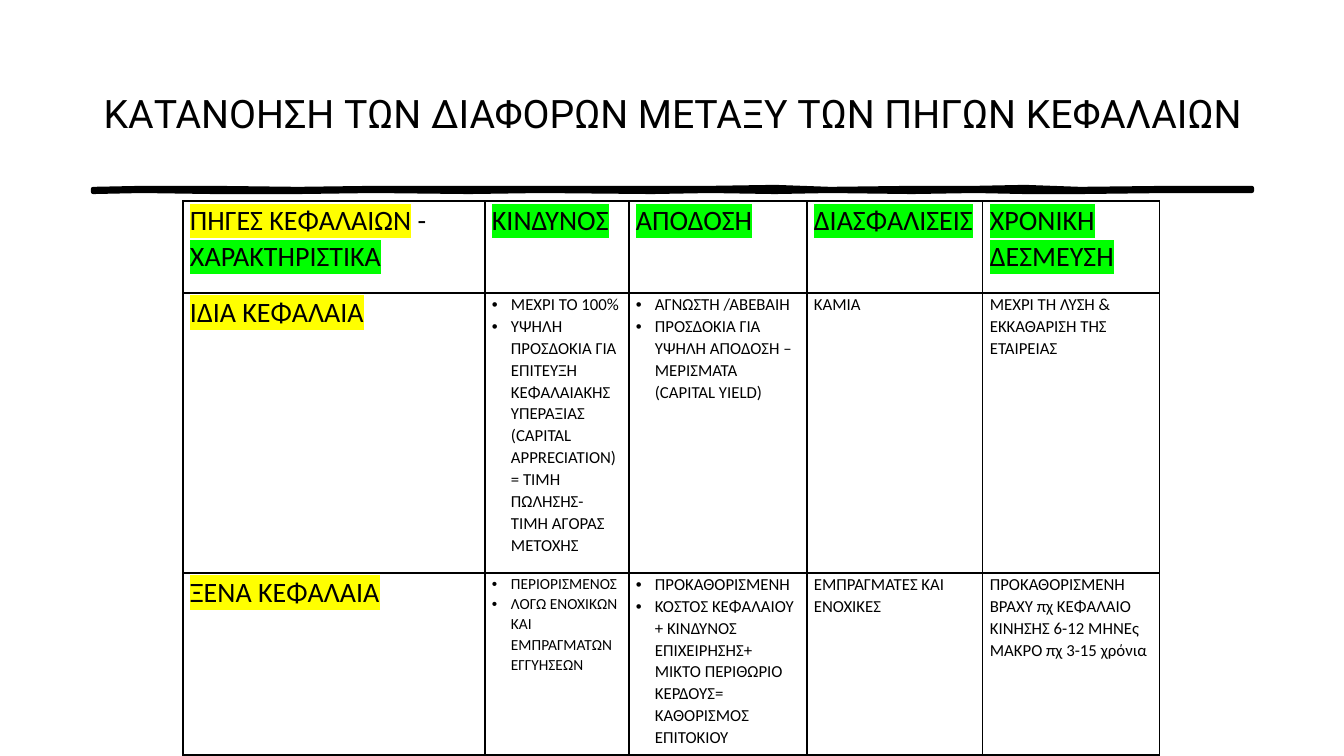
import pptx
import pptx.util
import pptx.dml.color
import pptx.enum.text
import pptx.oxml
import pptx.oxml.ns
from dataclasses import dataclass


@dataclass(frozen=True)
class Theme:
    ink: str = "000000"
    source_mark: str = "FFFF00"
    trait_mark: str = "00FF00"
    title_font: str = "Roboto"
    table_font: str = "Calibri"
    title_size: int = 28
    heading_size: int = 20
    body_size: int = 12
    small_size: int = 11
    border_width: int = 1
    stroke_width: int = 3
    line_spacing: float = 1.07


THEME = Theme()

# Content
TITLE = "ΚΑΤΑΝΟΗΣΗ ΤΩΝ ΔΙΑΦΟΡΩΝ ΜΕΤΑΞΥ ΤΩΝ ΠΗΓΩΝ ΚΕΦΑΛΑΙΩΝ"
CORNER = [("ΠΗΓΕΣ ΚΕΦΑΛΑΙΩΝ", THEME.source_mark), (" - ", None),
          ("ΧΑΡΑΚΤΗΡΙΣΤΙΚΑ", THEME.trait_mark)]
TRAITS = ["ΚΙΝΔΥΝΟΣ", "ΑΠΟΔΟΣΗ", "ΔΙΑΣΦΑΛΙΣΕΙΣ", "ΧΡΟΝΙΚΗ ΔΕΣΜΕΥΣΗ"]
SOURCES = [
    ("ΙΔΙΑ ΚΕΦΑΛΑΙΑ", [
        ["ΜΕΧΡΙ ΤΟ 100%",
         "ΥΨΗΛΗ ΠΡΟΣΔΟΚΙΑ ΓΙΑ ΕΠΙΤΕΥΞΗ ΚΕΦΑΛΑΙΑΚΗΣ ΥΠΕΡΑΞΙΑΣ "
         "(CAPITAL APPRECIATION)= ΤΙΜΗ ΠΩΛΗΣΗΣ- ΤΙΜΗ ΑΓΟΡΑΣ ΜΕΤΟΧΗΣ"],
        ["ΑΓΝΩΣΤΗ /ΑΒΕΒΑΙΗ",
         "ΠΡΟΣΔΟΚΙΑ ΓΙΑ ΥΨΗΛΗ ΑΠΟΔΟΣΗ – ΜΕΡΙΣΜΑΤΑ (CAPITAL YIELD)"],
        ["ΚΑΜΙΑ"],
        ["ΜΕΧΡΙ ΤΗ ΛΥΣΗ & ΕΚΚΑΘΑΡΙΣΗ ΤΗΣ ΕΤΑΙΡΕΙΑΣ"],
    ]),
    ("ΞΕΝΑ ΚΕΦΑΛΑΙΑ", [
        ["ΠΕΡΙΟΡΙΣΜΕΝΟΣ", "ΛΟΓΩ ΕΝΟΧΙΚΩΝ ΚΑΙ ΕΜΠΡΑΓΜΑΤΩΝ ΕΓΓΥΗΣΕΩΝ"],
        ["ΠΡΟΚΑΘΟΡΙΣΜΕΝΗ",
         "ΚΟΣΤΟΣ ΚΕΦΑΛΑΙΟΥ + ΚΙΝΔΥΝΟΣ ΕΠΙΧΕΙΡΗΣΗΣ+ ΜΙΚΤΟ ΠΕΡΙΘΩΡΙΟ "
         "ΚΕΡΔΟΥΣ= ΚΑΘΟΡΙΣΜΟΣ ΕΠΙΤΟΚΙΟΥ"],
        ["ΕΜΠΡΑΓΜΑΤΕΣ ΚΑΙ ΕΝΟΧΙΚΕΣ"],
        ["ΠΡΟΚΑΘΟΡΙΣΜΕΝΗ", "ΒΡΑΧΥ πχ ΚΕΦΑΛΑΙΟ ΚΙΝΗΣΗΣ 6-12 ΜΉΝΕς",
         "ΜΑΚΡΟ πχ 3-15 χρόνια"],
    ]),
]
BULLETED = (1, 2)
SMALL_CELL = (2, 1)

# Geometry in px
PX = 12192000 / 1344
SLIDE = (1344, 756)
TITLE_BOX = (93, 40, 1159, 146)
TABLE_AT = (183, 201)
COLUMNS = [302, 144, 178, 176, 177]
ROWS = [92, 280, 182]
CELL_MARGIN = 7
BULLET_INDENT = 19
# Brush stroke: x, top edge, bottom edge
BRUSH = [(93, 189, 192), (142, 188, 191), (214, 188, 192), (298, 189, 192),
         (374, 188, 191), (469, 188, 192), (541, 188, 191), (652, 188, 192),
         (710, 188, 191), (775, 187, 192), (830, 189, 191), (912, 188, 192),
         (975, 188, 191), (1025, 187, 192), (1080, 189, 192),
         (1168, 188, 191), (1252, 188, 191)]


def emu(px):
    return pptx.util.Emu(round(px * PX))


def colour(code):
    return pptx.dml.color.RGBColor.from_string(code)


def xml(text):
    return pptx.oxml.parse_xml(
        text.replace("/>", f" {pptx.oxml.ns.nsdecls('a')}/>", 1)
        if text.endswith("/>") and text.count("<") == 1
        else text.replace(">", f" {pptx.oxml.ns.nsdecls('a')}>", 1))


def format_span(span, font, size, mark=None):
    span.font.size = pptx.util.Pt(size)
    span.font.name = font
    span.font.color.rgb = colour(THEME.ink)
    if mark:
        fill = span.font._element.find(pptx.oxml.ns.qn("a:solidFill"))
        fill.addnext(xml(f'<a:highlight><a:srgbClr val="{mark}"/></a:highlight>'))


def add_bullet(para):
    properties = para._p.get_or_add_pPr()
    properties.set("marL", str(emu(BULLET_INDENT)))
    properties.set("indent", str(-emu(BULLET_INDENT)))
    properties.append(xml('<a:buFont typeface="Arial"/>'))
    properties.append(xml('<a:buChar char="•"/>'))


def format_cell(cell):
    cell.margin_left = cell.margin_right = emu(CELL_MARGIN)
    cell.margin_top = cell.margin_bottom = 0
    cell.fill.background()
    width = pptx.util.Pt(THEME.border_width)
    for index, side in enumerate(("lnL", "lnR", "lnT", "lnB")):
        cell._tc.get_or_add_tcPr().insert(index, xml(
            f'<a:{side} w="{width}"><a:solidFill><a:srgbClr val="{THEME.ink}"/>'
            f'</a:solidFill></a:{side}>'))


def write_cell(cell, paragraphs, size, bulleted=False):
    format_cell(cell)
    for index, spans in enumerate(paragraphs):
        frame = cell.text_frame
        para = frame.add_paragraph() if index else frame.paragraphs[0]
        para.line_spacing = THEME.line_spacing
        if bulleted:
            add_bullet(para)
        for text, mark in spans:
            span = para.add_run()
            span.text = text
            format_span(span, THEME.table_font, size, mark)


def add_brush(page):
    outline = [(x, top) for x, top, _ in BRUSH]
    outline += [(x, bottom) for x, _, bottom in reversed(BRUSH)]
    builder = page.shapes.build_freeform(*outline[0], scale=PX)
    builder.add_line_segments(outline[1:], close=True)
    brush = builder.convert_to_shape()
    brush.shadow.inherit = False
    brush.fill.solid()
    brush.fill.fore_color.rgb = colour(THEME.ink)
    brush.line.color.rgb = colour(THEME.ink)
    brush.line.width = pptx.util.Pt(THEME.stroke_width)


def add_title(page):
    box = page.shapes.title
    box.left, box.top, box.width, box.height = map(emu, TITLE_BOX)
    frame = box.text_frame
    frame.text = TITLE
    frame.word_wrap = True
    frame.margin_left = frame.margin_right = 0
    frame.vertical_anchor = pptx.enum.text.MSO_ANCHOR.MIDDLE
    para = frame.paragraphs[0]
    para.alignment = pptx.enum.text.PP_ALIGN.CENTER
    format_span(para.runs[0], THEME.title_font, THEME.title_size)


def add_sources_table(page):
    table = page.shapes.add_table(
        len(ROWS), len(COLUMNS), *map(emu, TABLE_AT),
        emu(sum(COLUMNS)), emu(sum(ROWS))).table
    table.first_row = table.horz_banding = False
    for column, width in zip(table.columns, COLUMNS):
        column.width = emu(width)
    for row, height in zip(table.rows, ROWS):
        row.height = emu(height)

    # Headings across the top
    headings = [CORNER] + [[(name, THEME.trait_mark)] for name in TRAITS]
    for c, spans in enumerate(headings):
        write_cell(table.cell(0, c), [spans], THEME.heading_size)

    # One row for each source of capital
    for r, (source, details) in enumerate(SOURCES, 1):
        write_cell(table.cell(r, 0), [[(source, THEME.source_mark)]],
                   THEME.heading_size)
        for c, lines in enumerate(details, 1):
            size = THEME.small_size if (r, c) == SMALL_CELL else THEME.body_size
            write_cell(table.cell(r, c), [[(line, None)] for line in lines],
                       size, c in BULLETED)


def main():
    deck = pptx.Presentation()
    deck.slide_width, deck.slide_height = map(emu, SLIDE)
    page = deck.slides.add_slide(deck.slide_layouts[5])
    add_brush(page)
    add_title(page)
    add_sources_table(page)
    deck.save("out.pptx")


if __name__ == "__main__":
    main()
